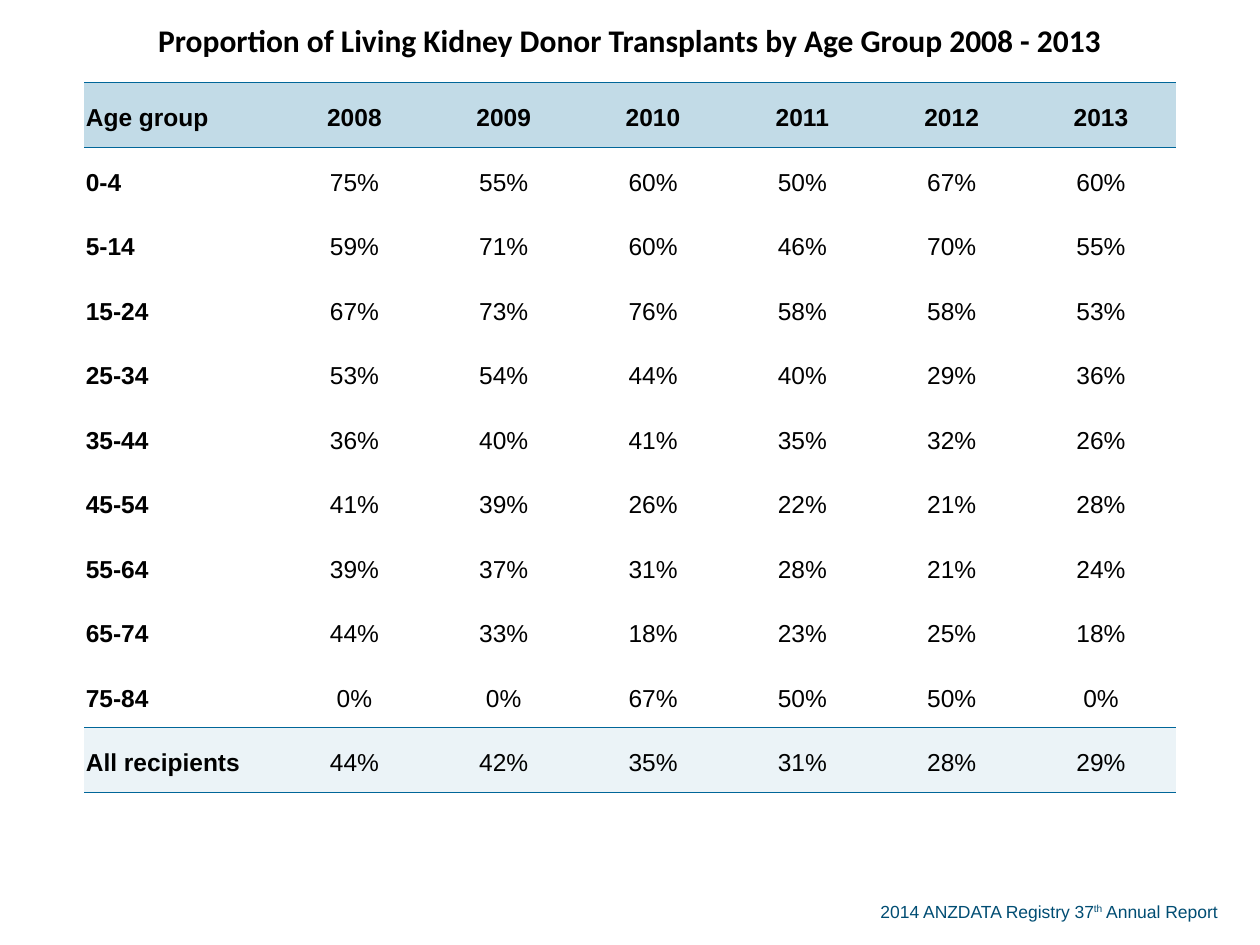
"""Build the slide on living kidney donor transplants by age group."""
import lxml.etree
import pptx
import pptx.dml.color
import pptx.enum.text
import pptx.oxml.ns
import pptx.util

Cm = pptx.util.Cm
Pt = pptx.util.Pt
CENTER = pptx.enum.text.PP_ALIGN.CENTER
LEFT = pptx.enum.text.PP_ALIGN.LEFT

TITLE = "Proportion of Living Kidney Donor Transplants by Age Group 2008 - 2013"
YEARS = ["2008", "2009", "2010", "2011", "2012", "2013"]
SHARES = {
    "0-4": [75, 55, 60, 50, 67, 60],
    "5-14": [59, 71, 60, 46, 70, 55],
    "15-24": [67, 73, 76, 58, 58, 53],
    "25-34": [53, 54, 44, 40, 29, 36],
    "35-44": [36, 40, 41, 35, 32, 26],
    "45-54": [41, 39, 26, 22, 21, 28],
    "55-64": [39, 37, 31, 28, 21, 24],
    "65-74": [44, 33, 18, 23, 25, 18],
    "75-84": [0, 0, 67, 50, 50, 0],
    "All recipients": [44, 42, 35, 31, 28, 29],
}
RULE_COLOR = "006699"
HEADER_FILL = "C2DBE7"
TOTAL_FILL = "EBF3F7"


def color(hex_code):
    return pptx.dml.color.RGBColor.from_string(hex_code)


def add_text(paragraph, text, size=14, font="Arial", ink="000000", bold=False,
             align=LEFT, baseline=None):
    paragraph.alignment = align
    run = paragraph.add_run()
    run.text = text
    run.font.size = Pt(size)
    run.font.name = font
    run.font.bold = bold
    run.font.color.rgb = color(ink)
    if baseline:
        run.font._element.set("baseline", str(baseline))


def set_borders(cell, ruled_sides):
    properties = cell._tc.get_or_add_tcPr()
    qn = pptx.oxml.ns.qn
    for side in "LRTB":
        border = lxml.etree.SubElement(properties, qn(f"a:ln{side}"))
        if side in ruled_sides:
            border.set("w", str(Pt(0.5)))
            fill = lxml.etree.SubElement(border, qn("a:solidFill"))
            lxml.etree.SubElement(fill, qn("a:srgbClr")).set("val", RULE_COLOR)
        else:
            border.set("w", "0")
            lxml.etree.SubElement(border, qn("a:noFill"))


def format_cell(cell, ruled_sides="", fill=None):
    cell.vertical_anchor = pptx.enum.text.MSO_ANCHOR.MIDDLE
    cell.margin_left = cell.margin_right = cell.margin_top = Cm(0.03)
    cell.margin_bottom = 0
    set_borders(cell, ruled_sides)
    if fill:
        cell.fill.solid()
        cell.fill.fore_color.rgb = color(fill)
    else:
        cell.fill.background()


def fill_row(table, row, entries, **cell_format):
    for column, entry in enumerate(entries):
        cell = table.cell(row, column)
        format_cell(cell, **cell_format)
        paragraph = cell.text_frame.paragraphs[0]
        paragraph.line_spacing = 1.19
        paragraph.space_after = Pt(14)
        add_text(paragraph, entry, bold=row == 1 or column == 0,
                 align=CENTER if column else LEFT)


def add_share_table(slide):
    row_count, column_count = len(SHARES) + 2, len(YEARS) + 1
    table = slide.shapes.add_table(row_count, column_count, Cm(1.7), 0,
                                   Cm(22), Cm(15.97)).table
    table.horz_banding = False
    for column in range(column_count):
        table.columns[column].width = Cm(3.01 if column else 3.94)
    for row in range(row_count):
        table.rows[row].height = Cm(1.3 if row else 1.67)

    for column in range(column_count):
        format_cell(table.cell(0, column), ruled_sides="B")
    title_cell = table.cell(0, 0)
    title_cell.merge(table.cell(0, column_count - 1))
    add_text(title_cell.text_frame.paragraphs[0], TITLE, size=18,
             font="Calibri", bold=True, align=CENTER)

    fill_row(table, 1, ["Age group"] + YEARS, ruled_sides="TB", fill=HEADER_FILL)
    row_formats = {2: {"ruled_sides": "T"},
                   row_count - 2: {"ruled_sides": "B"},
                   row_count - 1: {"ruled_sides": "TB", "fill": TOTAL_FILL}}
    for row, (age_group, shares) in enumerate(SHARES.items(), start=2):
        entries = [age_group] + [f"{share}%" for share in shares]
        fill_row(table, row, entries, **row_formats.get(row, {}))


def add_report_credit(slide):
    credit = slide.shapes.add_textbox(Cm(17.5), Cm(18.03), Cm(7.6), Cm(0.68))
    frame = credit.text_frame
    frame.word_wrap = True
    frame.auto_size = pptx.enum.text.MSO_AUTO_SIZE.SHAPE_TO_FIT_TEXT
    for text, baseline in [("2014 ANZDATA Registry 37", None), ("th", 30000),
                           (" Annual Report", None)]:
        add_text(frame.paragraphs[0], text, size=10, ink="004D73",
                 baseline=baseline)


def main():
    presentation = pptx.Presentation()
    presentation.slide_width = Cm(25.4)
    presentation.slide_height = Cm(19.05)
    slide = presentation.slides.add_slide(presentation.slide_layouts[6])
    add_report_credit(slide)
    add_share_table(slide)
    presentation.save("out.pptx")


if __name__ == "__main__":
    main()
